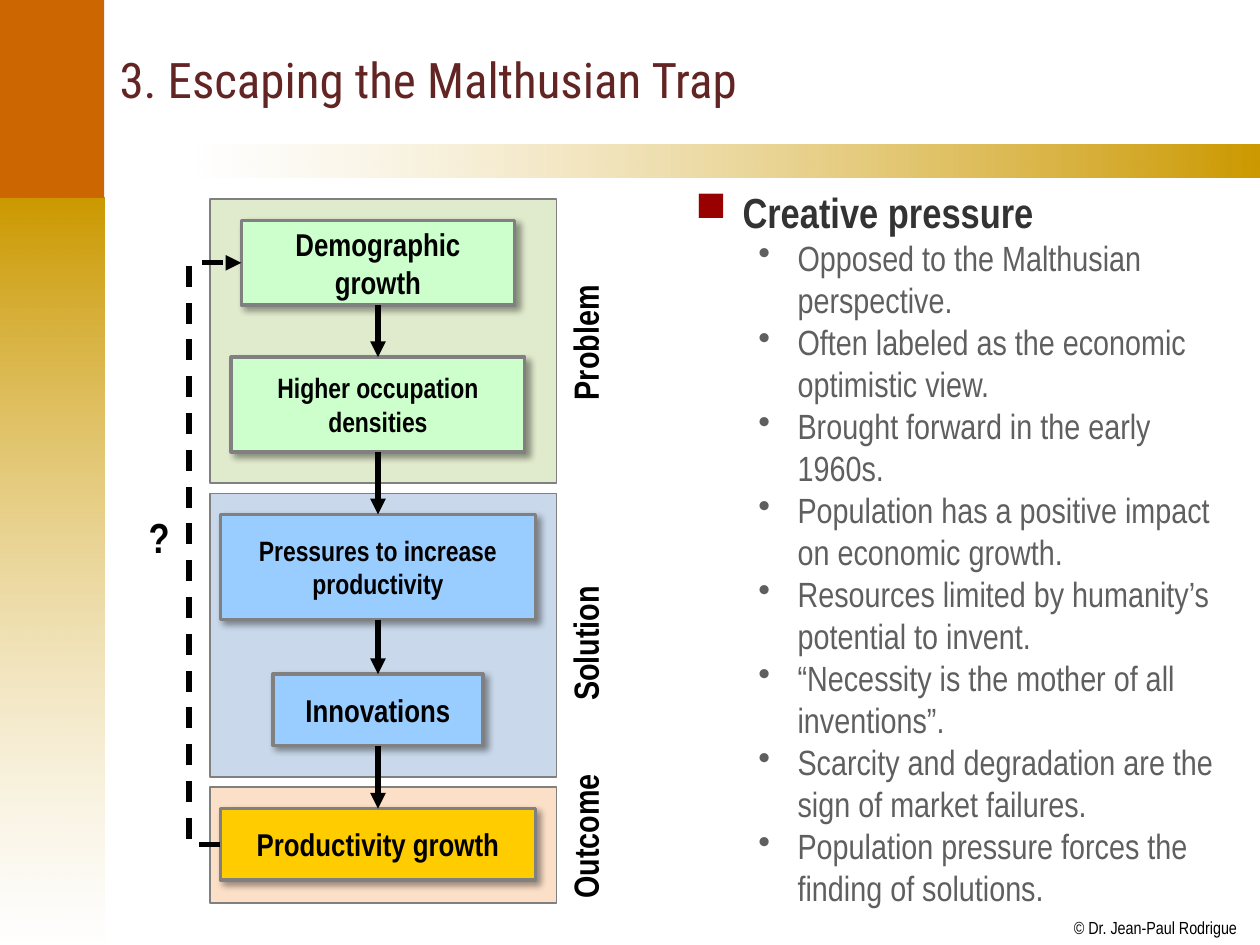
from collections import namedtuple

from lxml.etree import SubElement
from pptx import Presentation
from pptx.dml.color import RGBColor
from pptx.enum.dml import MSO_LINE
from pptx.enum.shapes import MSO_CONNECTOR as Connector, MSO_SHAPE as Preset
from pptx.enum.text import MSO_ANCHOR as Anchor, PP_ALIGN as Align
from pptx.oxml.ns import qn
from pptx.util import Cm, Pt

BLACK = RGBColor(0x00, 0x00, 0x00)
WHITE = RGBColor(0xFF, 0xFF, 0xFF)
GOLD = RGBColor(0xCC, 0x99, 0x00)
ORANGE = RGBColor(0xCC, 0x66, 0x00)
MAROON = RGBColor(0x63, 0x25, 0x23)
RED = RGBColor(0x99, 0x00, 0x00)
DARK_GREY = RGBColor(0x33, 0x33, 0x33)
TEXT_GREY = RGBColor(0x5F, 0x5F, 0x5F)
EDGE_GREY = RGBColor(0x80, 0x80, 0x80)
OLIVE = RGBColor(0xC3, 0xD6, 0x9B)
STEEL = RGBColor(0x95, 0xB3, 0xD7)
PEACH = RGBColor(0xFA, 0xC0, 0x90)
MINT = RGBColor(0xCC, 0xFF, 0xCC)
SKY = RGBColor(0x99, 0xCC, 0xFF)
YELLOW = RGBColor(0xFF, 0xCC, 0x00)

NARROW = "Arial Narrow"
TITLE_FONT = "Roboto Condensed"

# Lengths in centimetres
Box = namedtuple("Box", "left top width height")

# Problem, solution and outcome: label, colour, top, height, label centre
PANELS = [
    ("Problem", OLIVE, 0, 5.72, 2.89),
    ("Solution", STEEL, 5.93, 5.72, 8.95),
    ("Outcome", PEACH, 11.85, 2.34, 12.84),
]
# Steps: lines, text size, colour, top, width, height
STEPS = [
    (["Demographic growth"], 18, MINT, 0.43, 5.51, 1.7),
    (["Higher occupation", "densities"], 16, MINT, 3.18, 5.92, 1.91),
    (["Pressures to increase", "productivity"], 16, SKY, 6.35, 6.35, 2.12),
    (["Innovations"], 18, SKY, 9.57, 4.23, 1.44),
    (["Productivity growth"], 18, YELLOW, 12.28, 6.35, 1.44),
]
VIEWS = [
    "Opposed to the Malthusian perspective.",
    "Often labeled as the economic optimistic view.",
    "Brought forward in the early 1960s.",
    "Population has a positive impact on economic growth.",
    "Resources limited by humanity’s potential to invent.",
    "“Necessity is the mother of all inventions”.",
    "Scarcity and degradation are the sign of market failures.",
    "Population pressure forces the finding of solutions.",
]


def place(box):
    return [Cm(length) for length in box]


def set_alpha(shape, percent, index=0):
    colour = shape.element.spPr.findall(".//" + qn("a:srgbClr"))[index]
    SubElement(colour, qn("a:alpha"), val=str(percent * 1000))


def add_run(paragraph, words, size, colour=BLACK, bold=False, font=NARROW):
    run = paragraph.add_run()
    run.text = words
    run.font.name = font
    run.font.size = Pt(size)
    run.font.bold = bold
    run.font.color.rgb = colour


def add_rect(slide, box, colour=None, edge=None):
    rect = slide.shapes.add_shape(Preset.RECTANGLE, *place(box))
    rect.shadow.inherit = False
    if colour is not None:
        rect.fill.solid()
        rect.fill.fore_color.rgb = colour
    if edge:
        rect.line.color.rgb = EDGE_GREY
        rect.line.width = Pt(edge)
    else:
        rect.line.fill.background()
    return rect


def add_gradient(slide, box, angle, colours, faded_stop, alpha):
    band = add_rect(slide, box)
    band.fill.gradient()
    band.fill.gradient_angle = angle
    for stop, colour in zip(band.fill.gradient_stops, colours):
        stop.color.rgb = colour
    set_alpha(band, alpha, faded_stop)


def add_label(slide, box, words, size, **style):
    label = slide.shapes.add_textbox(*place(box))
    label.text_frame.word_wrap = False
    paragraph = label.text_frame.paragraphs[0]
    paragraph.alignment = Align.CENTER
    add_run(paragraph, words, size, **style)
    return label


def add_backdrop(slide, page):
    side, split = 2.1, 3.99
    add_gradient(slide, Box(page.left, split, side, page.height - split),
                 270, (GOLD, WHITE), 1, 51)
    add_gradient(slide, Box(3.99, 2.92, page.width - 3.99, 0.67),
                 0, (WHITE, GOLD), 0, 50)
    add_rect(slide, Box(page.left, page.top, side, split), ORANGE)
    # Copyright line
    credit = add_label(slide, Box(21.64, 18.49, 3.3, 0.43),
                       "© Dr. Jean-Paul Rodrigue", 10).text_frame
    credit.margin_left = credit.margin_right = 0
    credit.margin_top = credit.margin_bottom = 0


def add_title(slide, box):
    title = slide.shapes.add_textbox(*place(box)).text_frame
    title.word_wrap = True
    title.vertical_anchor = Anchor.MIDDLE
    add_run(title.paragraphs[0], "3. Escaping the Malthusian Trap", 28,
            MAROON, font=TITLE_FONT)


def add_step(slide, box, lines, size, colour):
    step = add_rect(slide, box, colour, 2)
    effects = step.element.spPr.find(qn("a:effectLst"))
    shadow = SubElement(effects, qn("a:outerShdw"), blurRad=str(Pt(4)),
                        dist=str(Pt(3)), dir="2700000", algn="tl", rotWithShape="0")
    black = SubElement(shadow, qn("a:srgbClr"), val="000000")
    SubElement(black, qn("a:alpha"), val="40000")
    frame = step.text_frame
    frame.word_wrap = True
    frame.vertical_anchor = Anchor.MIDDLE
    for index, line in enumerate(lines):
        paragraph = frame.add_paragraph() if index else frame.paragraphs[0]
        paragraph.alignment = Align.CENTER
        add_run(paragraph, line, size, bold=True)
    return step


def add_arrow(slide, kind, start, end, dash=None):
    arrow = slide.shapes.add_connector(kind, *start, *end)
    arrow.line.color.rgb = BLACK
    arrow.line.width = Pt(3)
    if dash:
        arrow.line.dash_style = dash
    properties = arrow.element.spPr
    SubElement(properties.find(qn("a:ln")), qn("a:tailEnd"), type="triangle")
    SubElement(properties, qn("a:effectLst"))
    return arrow


def add_diagram(slide, box):
    # Panels with upright labels
    label_width, label_height = 3.05, 1.11
    for words, colour, top, height, middle in PANELS:
        panel = add_rect(slide, Box(box.left, box.top + top, box.width, height), colour, 1)
        set_alpha(panel, 50)
        label = add_label(
            slide, Box(box.left + 7.57 - label_width / 2,
                       box.top + middle - label_height / 2, label_width, label_height),
            words, 20, bold=True)
        label.rotation = 270

    # Steps on one axis, linked downwards
    axis = box.left + 3.39
    steps = [add_step(slide, Box(axis - width / 2, box.top + top, width, height),
                      lines, size, colour)
             for lines, size, colour, top, width, height in STEPS]
    for upper, lower in zip(steps, steps[1:]):
        link = add_arrow(slide, Connector.STRAIGHT, (Cm(axis), upper.top + upper.height),
                         (Cm(axis), lower.top))
        link.begin_connect(upper, 2)
        link.end_connect(lower, 0)

    # Feedback from the last step to the first
    first, last = steps[0], steps[-1]
    feedback = add_arrow(slide, Connector.ELBOW, (last.left, last.top + last.height // 2),
                         (first.left, first.top + first.height // 2), MSO_LINE.DASH)
    bend = (Cm(box.left - 0.42) - last.left) / (first.left - last.left)
    feedback_shape = feedback.element.spPr.find(qn("a:prstGeom"))
    SubElement(feedback_shape.find(qn("a:avLst")), qn("a:gd"),
               name="adj1", fmla=f"val {round(bend * 100000)}")
    add_label(slide, Box(box.left - 1.49, box.top + 6.17, 0.94, 1.27), "?", 24, bold=True)


def add_bullet(paragraph, mark, margin, hang, colour=None):
    properties = paragraph._p.get_or_add_pPr()
    properties.set("marL", str(Cm(margin)))
    properties.set("indent", str(-Cm(hang)))
    if colour is not None:
        fill = SubElement(properties, qn("a:buClr"))
        SubElement(fill, qn("a:srgbClr"), val=str(colour))
    SubElement(properties, qn("a:buChar"), char=mark)


def add_views(slide, box):
    body = slide.shapes.add_textbox(*place(box)).text_frame
    body.word_wrap = True
    heading = body.paragraphs[0]
    add_bullet(heading, "■", 0.95, 0.95, RED)
    add_run(heading, "Creative pressure", 24, DARK_GREY, bold=True)
    for view in VIEWS:
        item = body.add_paragraph()
        item.level = 1
        add_bullet(item, "•", 2.06, 0.79)
        add_run(item, view, 20, TEXT_GREY)


def main():
    deck = Presentation()
    page = Box(0, 0, 25.4, 19.05)
    deck.slide_width, deck.slide_height = Cm(page.width), Cm(page.height)
    slide = deck.slides.add_slide(deck.slide_layouts[6])
    add_backdrop(slide, page)
    add_title(slide, Box(2.16, 0.28, 22.81, 2.64))
    add_diagram(slide, Box(4.23, 4.02, 6.99, 14.19))
    add_views(slide, Box(13.77, 3.63, 11.25, 14.71))
    deck.save("out.pptx")


if __name__ == "__main__":
    main()
